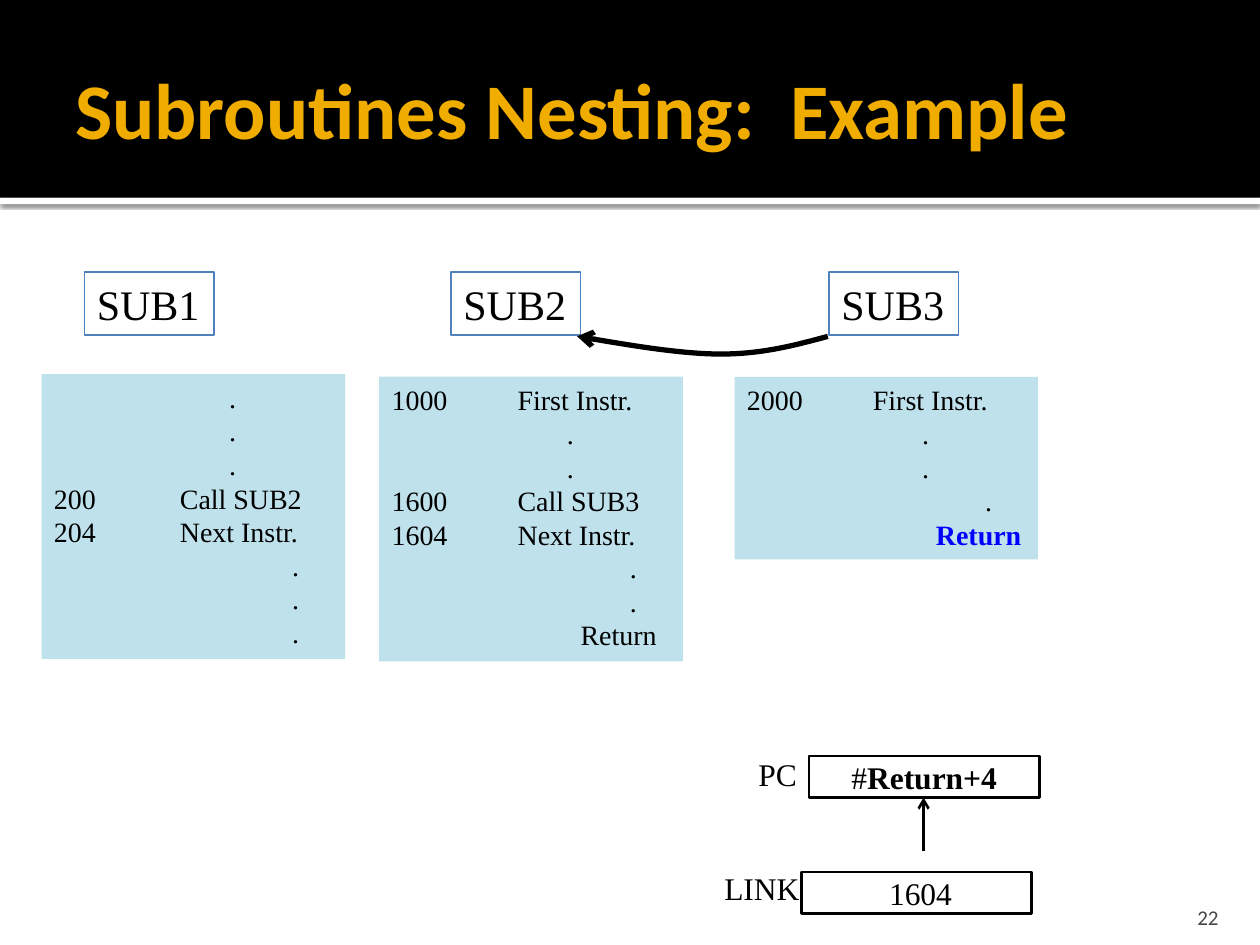
from lxml.etree import SubElement
from pptx import Presentation
from pptx.dml.color import RGBColor
from pptx.enum.shapes import MSO_CONNECTOR, MSO_SHAPE
from pptx.enum.text import MSO_ANCHOR as Anchor, PP_ALIGN as Align
from pptx.oxml.ns import qn
from pptx.util import Inches, Pt

BLACK = RGBColor(0, 0, 0)
WHITE = RGBColor(255, 255, 255)
AMBER = RGBColor(0xF0, 0xAD, 0x00)
GREY = RGBColor(0x45, 0x45, 0x45)
STEEL = RGBColor(0x4F, 0x81, 0xBD)
PALE = RGBColor(0xBF, 0xE1, 0xEB)
BLUE = RGBColor(0, 0, 255)

SERIF, SANS = "Times New Roman", "Calibri"
INSETS = (0.1, 0.05, 0.1, 0.05)

# Tab positions inside a code panel, in inches
INSTRUCTION, DOT, RETURN, DEEP_DOT = 1.0, 1.39, 1.5, 1.89
EMPHASIS = {"bold": True, "color": BLUE}

# Each code line: address, text, tab position, run format
DOT_LINE = ("", ".", DOT, {})
DEEP_LINE = ("", ".", DEEP_DOT, {})
SUBROUTINES = [
    {"name": "SUB1", "label_left": 0.67, "panel": (0.33, 2.97, 2.41, 2.26), "lines": [
        *[DOT_LINE] * 3,
        ("200", "Call SUB2", INSTRUCTION, {}),
        ("204", "Next Instr.", INSTRUCTION, {}),
        *[DEEP_LINE] * 3]},
    {"name": "SUB2", "label_left": 3.58, "panel": (3.01, 2.99, 2.41, 2.26), "lines": [
        ("1000", "First Instr.", INSTRUCTION, {}),
        *[DOT_LINE] * 2,
        ("1600", "Call SUB3", INSTRUCTION, {}),
        ("1604", "Next Instr.", INSTRUCTION, {}),
        *[DEEP_LINE] * 2,
        ("", "Return", RETURN, {})]},
    {"name": "SUB3", "label_left": 6.58, "panel": (5.83, 2.99, 2.41, 1.45), "lines": [
        ("2000", "First Instr.", INSTRUCTION, {}),
        *[DOT_LINE] * 2,
        DEEP_LINE,
        ("", "Return", RETURN, EMPHASIS)]},
]
REGISTERS = [
    {"name": "PC", "label": (5.92, 5.94, 0.51, 0.4), "box": (6.42, 6.0, 1.83, 0.33),
     "runs": [("#", {}), ("Return+4", {"bold": True})]},
    {"name": "LINK", "label": (5.65, 6.85, 0.81, 0.4), "box": (6.36, 6.92, 1.83, 0.33),
     "runs": [(" 1604", {})]},
]
# Return arrow in hundredths of an inch: start, then (control, control, end)
CURVE_START = (657, 267)
CURVES = [((631, 274), (605, 281), (572, 281)),
          ((539, 281), (458, 267), (458, 267))]


def add_runs(paragraph, runs, size, font=SERIF, color=BLACK):
    for text, changes in runs:
        run = paragraph.add_run()
        run.text = text
        style = {"size": Pt(size), "name": font, "color": color, **changes}
        run.font.color.rgb = style.pop("color")
        for name, value in style.items():
            setattr(run.font, name, value)


def set_frame(frame, insets=INSETS, anchor=Anchor.TOP, wrap=True):
    sides = ("margin_left", "margin_top", "margin_right", "margin_bottom")
    settings = dict(zip(sides, map(Inches, insets)),
                    vertical_anchor=anchor, word_wrap=wrap)
    for name, value in settings.items():
        setattr(frame, name, value)


def add_box(slide, place, fill=None, line=None, width=0.75):
    shape = slide.shapes.add_shape(MSO_SHAPE.RECTANGLE, *map(Inches, place))
    shape.shadow.inherit = False
    if fill is None:
        shape.fill.background()
    else:
        shape.fill.solid()
        shape.fill.fore_color.rgb = fill
    if line is None:
        shape.line.fill.background()
    else:
        shape.line.color.rgb = line
        shape.line.width = Pt(width)
    set_frame(shape.text_frame)
    return shape


def write(shape, runs, size, align=Align.LEFT, font=SERIF, color=BLACK, **frame):
    set_frame(shape.text_frame, **frame)
    paragraph = shape.text_frame.paragraphs[0]
    paragraph.alignment = align
    add_runs(paragraph, runs, size, font, color)


def add_text(slide, place, text, size, bold=False, **options):
    box = slide.shapes.add_textbox(*map(Inches, place))
    write(box, [(text, {"bold": bold})], size, **options)


def add_arrowhead(shape):
    SubElement(shape.line._get_or_add_ln(), qn("a:tailEnd"), type="arrow")


def add_header(slide):
    band = add_box(slide, (0, 1.57, 10, 0.05), WHITE)
    effects = band._element.spPr.find(qn("a:effectLst"))
    shadow = SubElement(effects, qn("a:outerShdw"), blurRad=str(Pt(2.5)),
                        dist=str(Pt(0.8)), dir="5400000", rotWithShape="0")
    color = SubElement(shadow, qn("a:srgbClr"), val=str(BLACK))
    SubElement(color, qn("a:alpha"), val="60000")
    add_box(slide, (0, 0, 10, 1.57), BLACK)
    add_text(slide, (0.5, 0.17, 9, 1.37), "Subroutines Nesting:  Example", 45,
             bold=True, font=SANS, color=AMBER, anchor=Anchor.MIDDLE,
             insets=(0.1, 0.05, 0.05, 0.05))
    add_text(slide, (8.97, 7.08, 0.8, 0.3), "22", 12, align=Align.RIGHT, font=SANS,
             color=GREY, anchor=Anchor.BOTTOM, insets=(0.1, 0.05, 0.1, 0))


def add_code_panel(slide, place, lines):
    frame = add_box(slide, place, PALE).text_frame
    for index, (address, text, tab, style) in enumerate(lines):
        paragraph = frame.add_paragraph() if index else frame.paragraphs[0]
        paragraph.alignment = Align.LEFT
        tabs = SubElement(paragraph._p.get_or_add_pPr(), qn("a:tabLst"))
        SubElement(tabs, qn("a:tab"), pos=str(Inches(tab)), algn="l")
        add_runs(paragraph, [(address + "\t", {}), (text, style)], 16)


def add_return_arrow(slide):
    """Draw the bent arrow, turning each straight segment into a Bezier curve."""
    ends = [curve[-1] for curve in CURVES]
    builder = slide.shapes.build_freeform(*CURVE_START, scale=Inches(0.01))
    builder.add_line_segments(ends, close=False)
    arrow = builder.convert_to_shape()
    left, top = (min(values) for values in zip(CURVE_START, *ends))
    segments = list(arrow._element.iter(qn("a:lnTo")))
    for segment, curve in zip(segments, CURVES):
        segment.tag = qn("a:cubicBezTo")
        segment.remove(segment[0])
        for x, y in curve:
            SubElement(segment, qn("a:pt"), x=str(x - left), y=str(y - top))
    arrow.shadow.inherit = False
    arrow.fill.background()
    arrow.line.color.rgb = BLACK
    arrow.line.width = Pt(3)
    add_arrowhead(arrow)


def add_load_arrow(slide):
    line = slide.shapes.add_connector(
        MSO_CONNECTOR.STRAIGHT, *map(Inches, (7.33, 6.75, 7.33, 6.33)))
    line.line.color.rgb = BLACK
    line.line.width = Pt(1.5)
    add_arrowhead(line)
    SubElement(line._element.spPr, qn("a:effectLst"))


def main():
    presentation = Presentation()
    presentation.slide_width, presentation.slide_height = Inches(10), Inches(7.5)
    slide = presentation.slides.add_slide(presentation.slide_layouts[6])
    add_header(slide)
    for routine in SUBROUTINES:
        label = add_box(slide, (routine["label_left"], 2.16, 1.03, 0.5), line=STEEL)
        write(label, [(routine["name"], {})], 24)
        add_code_panel(slide, routine["panel"], routine["lines"])
    for register in REGISTERS:
        box = add_box(slide, register["box"], line=BLACK, width=1.5)
        write(box, register["runs"], 18, align=Align.CENTER, anchor=Anchor.MIDDLE)
        add_text(slide, register["label"], register["name"], 18, wrap=False)
    add_return_arrow(slide)
    add_load_arrow(slide)
    presentation.save("out.pptx")


if __name__ == "__main__":
    main()
